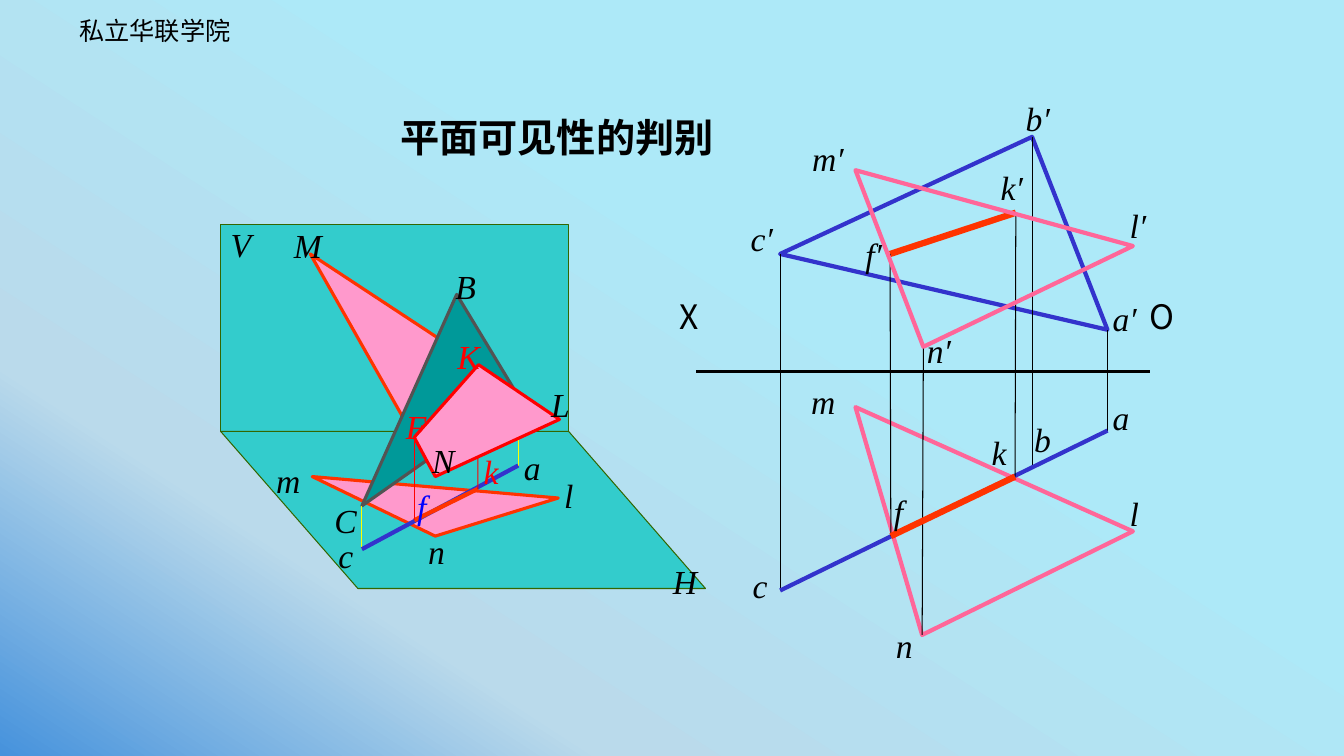
from copy import deepcopy
from dataclasses import dataclass

from lxml import etree
from pptx import Presentation
from pptx.dml.color import RGBColor
from pptx.enum.shapes import MSO_CONNECTOR, MSO_SHAPE
from pptx.oxml.ns import qn
from pptx.util import Cm, Pt

STRAIGHT = MSO_CONNECTOR.STRAIGHT
RECTANGLE = MSO_SHAPE.RECTANGLE


@dataclass(frozen=True)
class Theme:
    latin: str = "Times New Roman"
    chinese: str = "Noto Sans CJK SC"
    header_font: str = "Noto Sans CJK JP"
    header_size: int = 18
    title_size: int = 28
    label_size: int = 24
    black: str = "000000"
    red: str = "FF0000"
    orange: str = "FF3300"
    blue: str = "3333CC"
    bright_blue: str = "0000FF"
    yellow: str = "FFFF00"
    rose: str = "FF6699"
    pink: str = "FF99CC"
    teal: str = "009999"
    gray: str = "535353"
    plane: str = "33CCCC"
    plane_edge: str = "336600"
    backdrop: tuple = ((0, "4692DC"), (0.24, "BADAEB"), (0.62, "ADE9F8"))


theme = Theme()
prs = Presentation()
prs.slide_width, prs.slide_height = Cm(33.87), Cm(19.05)
slide = prs.slides.add_slide(prs.slide_layouts[6])

backdrop = slide.background.fill
backdrop.gradient()
backdrop.gradient_angle = 57
stop_list = slide.element.find(".//" + qn("a:gsLst"))
stop_list.append(deepcopy(stop_list[0]))
for stop, (position, color) in zip(backdrop.gradient_stops, theme.backdrop):
    stop.position = position
    stop.color.rgb = RGBColor.from_string(color)


def write(text, x, y, width=1.6, height=1.27, size=theme.label_size, color=theme.black,
          font=theme.latin, east_asian=theme.chinese, bold=False, italic=False):
    box = slide.shapes.add_textbox(Cm(x), Cm(y), Cm(width), Cm(height))
    box.text_frame.word_wrap = True
    run = box.text_frame.paragraphs[0].add_run()
    run.text = text
    run.font.name = font
    run.font.size = Pt(size)
    run.font.bold = bold
    run.font.italic = italic
    run.font.color.rgb = RGBColor.from_string(color)
    etree.SubElement(run.font._element, qn("a:ea"), typeface=east_asian)


def draw(points, color, width, fill=None):
    corners = [(Cm(x), Cm(y)) for x, y in points]
    if len(corners) == 2:
        outline = slide.shapes.add_connector(STRAIGHT, *corners[0], *corners[1])
        etree.SubElement(outline._element.spPr, qn("a:effectLst"))
    else:
        builder = slide.shapes.build_freeform(*corners[0])
        builder.add_line_segments(corners[1:], close=True)
        outline = builder.convert_to_shape()
        outline.shadow.inherit = False
        if fill:
            outline.fill.solid()
            outline.fill.fore_color.rgb = RGBColor.from_string(fill)
        else:
            outline.fill.background()
    outline.line.color.rgb = RGBColor.from_string(color)
    outline.line.width = Pt(width)


write("私立华联学院", 1.75, 0.25, width=7.47, height=1.02, size=theme.header_size,
      font=theme.header_font, east_asian=theme.header_font)
write("平面可见性的判别", 9.84, 2.72, width=10, height=1.45, size=theme.title_size, bold=True)

vertical_plane = slide.shapes.add_shape(RECTANGLE, Cm(5.56), Cm(5.66), Cm(8.77), Cm(5.21))
vertical_plane.shadow.inherit = False
vertical_plane.fill.solid()
vertical_plane.fill.fore_color.rgb = RGBColor.from_string(theme.plane)
vertical_plane.line.color.rgb = RGBColor.from_string(theme.plane_edge)
vertical_plane.line.width = Pt(0.75)
horizontal_plane = [(5.56, 10.87), (9.02, 14.83), (17.78, 14.83), (14.33, 10.87)]
draw(horizontal_plane, theme.plane_edge, 0.75, theme.plane)

space = {
    "A": (13.06, 9.98), "B": (11.51, 7.42), "C": (9.12, 12.75),
    "M": (7.82, 6.4), "N": (10.97, 12.01), "L": (14.1, 10.57),
    "F": (10.44, 11.02), "K": (12.06, 9.19),
    "a": (13.06, 11.73), "c": (9.12, 13.84),
    "m": (7.87, 12.01), "n": (10.97, 13.51), "l": (14.07, 12.55),
    "f": (10.44, 13.11), "k": (12.04, 12.32),
}
space_outlines = [
    ("FMK", theme.orange, 2.25, theme.pink),
    ("nlm", theme.orange, 2.25, theme.pink),
    ("ACB", theme.gray, 2.25, theme.teal),
    ("aA", theme.yellow, 0.75, None),
    ("cC", theme.yellow, 0.75, None),
    ("ac", theme.blue, 3, None),
    ("fk", theme.orange, 3, None),
    ("Ff", theme.red, 0.75, None),
    ("Kk", theme.red, 0.75, None),
    ("KFNL", theme.red, 2.25, theme.pink),
]
for names, color, width, fill in space_outlines:
    draw([space[name] for name in names], color, width, fill)

views = {
    "a′": (27.91, 8.31), "b′": (26.01, 3.45), "c′": (19.66, 6.4),
    "m′": (21.56, 4.29), "n′": (23.27, 8.74), "l′": (28.55, 6.2),
    "f′": (22.43, 6.4), "k′": (25.6, 5.36),
    "a": (27.91, 10.85), "b": (26.01, 11.71), "c": (19.66, 14.88),
    "m": (21.56, 10.26), "n": (23.24, 16), "l": (28.55, 13.39),
    "f": (22.45, 13.51), "k": (25.58, 12.01),
}
view_outlines = [
    ("c′ b′ a′", theme.blue, 3),
    ("c c′", theme.black, 0.75),
    ("a a′", theme.black, 0.75),
    ("b b′", theme.black, 0.75),
    ("m l n", theme.rose, 3),
    ("n n′", theme.black, 0.75),
    ("c a", theme.blue, 3),
    ("k′ f′", theme.orange, 4.5),
    ("f f′", theme.black, 0.75),
    ("k k′", theme.black, 0.75),
    ("f k", theme.orange, 4.5),
    ("m′ n′ l′", theme.rose, 3),
]
draw([(17.55, 9.37), (28.98, 9.37)], theme.black, 2.25)
for names, color, width in view_outlines:
    draw([views[name] for name in names.split()], color, width)

space_labels = [
    ("V", 5.56, 5.51), ("H", 16.71, 14), ("M", 7.16, 5.54), ("N", 10.64, 10.97),
    ("L", 13.64, 9.55), ("B", 11.23, 6.58), ("C", 8.18, 12.47), ("F", 9.98, 10.11),
    ("K", 11.28, 8.33), ("m", 6.71, 11.46), ("n", 10.54, 13.26), ("l", 13.97, 11.84),
    ("a", 12.95, 11.13), ("c", 8.28, 13.36), ("f", 10.26, 12.12), ("k", 11.94, 11.23),
]
accents = {"F": theme.red, "K": theme.red, "k": theme.red, "f": theme.bright_blue}
for name, x, y in space_labels:
    write(name, x, y, color=accents.get(name, theme.black), italic=True)

view_labels = [
    ("a′", 27.79, 7.37), ("b′", 25.6, 2.34), ("c′", 18.67, 5.36), ("m′", 20.22, 3.35),
    ("n′", 23.11, 8.2), ("l′", 28.22, 5.03), ("f′", 21.56, 5.77), ("k′", 24.97, 4.09),
    ("a", 27.79, 9.88), ("b", 25.81, 10.44), ("c", 18.72, 14.1), ("m", 20.19, 9.47),
    ("n", 22.33, 15.62), ("l", 28.22, 12.29), ("f", 22.28, 12.24), ("k", 24.74, 10.77),
]
for name, x, y in view_labels:
    write(name, x, y, italic=True)

for name, x in [("X", 16.87), ("O", 28.73)]:
    write(name, x, 7.32, width=0.89, font=theme.chinese)

prs.save("out.pptx")
